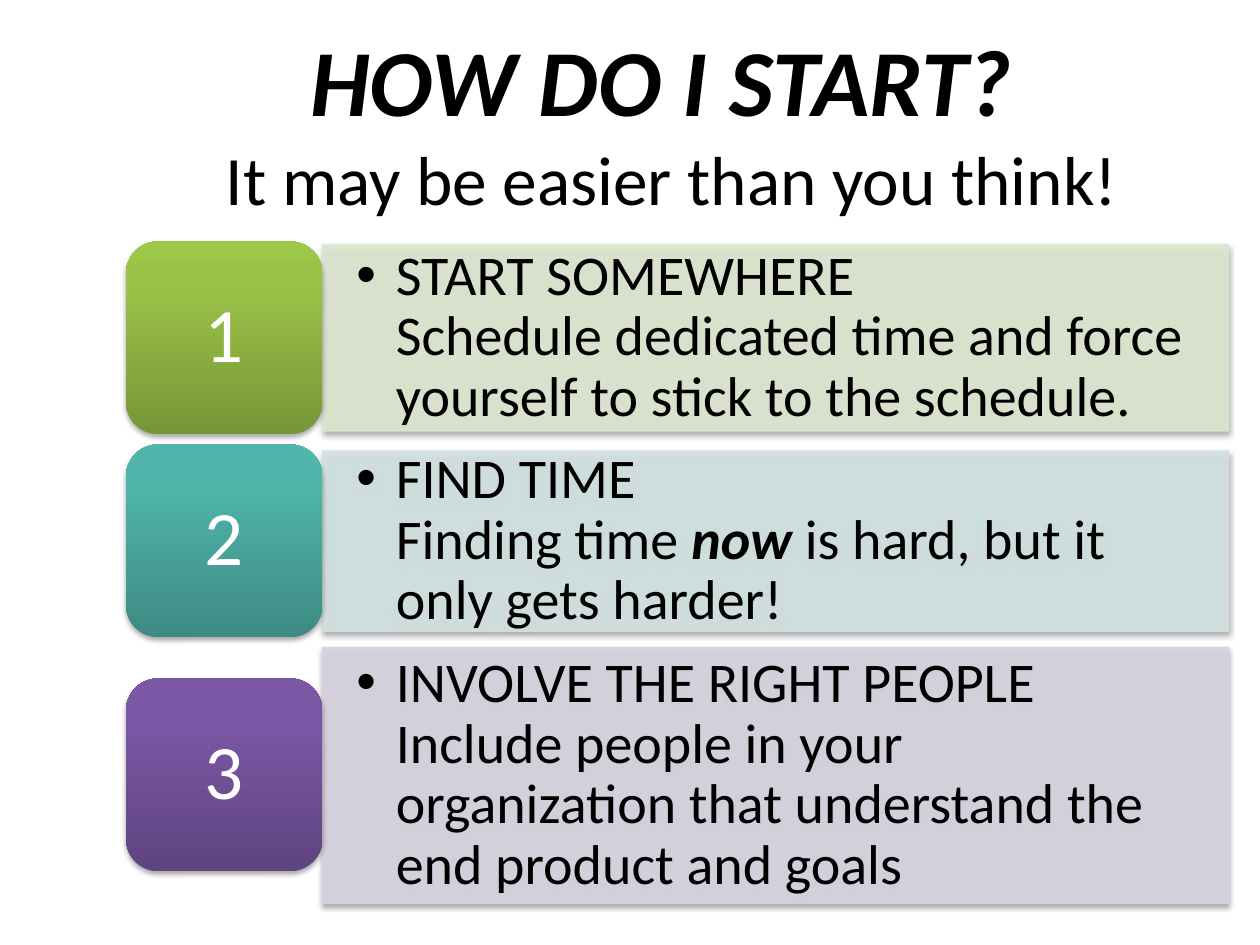
from lxml import etree
from pptx import Presentation
from pptx.dml.color import RGBColor
from pptx.enum.shapes import MSO_SHAPE as Shape
from pptx.enum.text import MSO_ANCHOR as Anchor, MSO_AUTO_SIZE as AutoSize, PP_ALIGN as Align
from pptx.oxml import parse_xml
from pptx.oxml.ns import nsdecls, qn
from pptx.util import Pt

# Content: a run is (text, emphasised)
FONT = "Calibri"
TITLE = [("HOW DO I START? ", 54, True), ("It may be easier than you think!", 39.6, False)]
STEPS = [
    {"heading": "START SOMEWHERE",
     "runs": [("Schedule dedicated time and force yourself to stick to the schedule.", False)],
     "panel": "DEE7D1", "badge": ("779737", "9BC348", "9DC746"),
     "panel_top": 139.7, "panel_height": 106.6, "badge_top": 138},
    {"heading": "FIND TIME",
     "runs": [("Finding time ", False), ("now", True), (" is hard, but it only gets harder!", False)],
     "panel": "D2E3E2", "badge": ("3D8B83", "50B5AA", "4EB8AC"),
     "panel_top": 257.7, "panel_height": 103, "badge_top": 254},
    {"heading": "INVOLVE THE RIGHT PEOPLE",
     "runs": [("Include people in your organization that understand the end product and goals", False)],
     "panel": "D8D3E0", "badge": ("5F4480", "7B58A6", "7C57A8"),
     "panel_top": 370, "panel_height": 146.2, "badge_top": 387.7},
]

# Layout in points
BADGE_LEFT, BADGE_WIDTH, BADGE_HEIGHT = 72, 112.3, 110.2
PANEL_LEFT, PANEL_WIDTH = BADGE_LEFT + BADGE_WIDTH, 517.7


def rgb(color):
    return RGBColor.from_string(color)


def add_run(paragraph, text, size, color, strong=False):
    run = paragraph.add_run()
    run.text = text
    font = run.font
    font.name, font.size = FONT, Pt(size)
    font.bold = font.italic = strong
    font.color.rgb = rgb(color)


def set_frame(shape, side=7.2, edge=3.6):
    frame = shape.text_frame
    frame.word_wrap = True
    frame.auto_size = AutoSize.NONE
    frame.vertical_anchor = Anchor.MIDDLE
    frame.margin_left = frame.margin_right = Pt(side)
    frame.margin_top = frame.margin_bottom = Pt(edge)
    return frame.paragraphs[0]


def add_shadow(shape):
    shape._element.spPr.append(parse_xml(
        f'<a:effectLst {nsdecls("a")}><a:outerShdw blurRad="{Pt(3.1)}" dist="{Pt(1.8)}" '
        'dir="5400000" rotWithShape="0"><a:srgbClr val="000000"><a:alpha val="35000"/>'
        '</a:srgbClr></a:outerShdw></a:effectLst>'))


def set_opacity(fill_element, percent):
    color = fill_element.find(".//" + qn("a:srgbClr"))
    etree.SubElement(color, qn("a:alpha")).set("val", str(percent * 1000))


def add_panel(slide, step):
    panel = slide.shapes.add_shape(Shape.RECTANGLE, Pt(PANEL_LEFT), Pt(step["panel_top"]),
                                   Pt(PANEL_WIDTH), Pt(step["panel_height"]))
    panel.fill.solid()
    panel.fill.fore_color.rgb = panel.line.color.rgb = rgb(step["panel"])
    panel.line.width = Pt(0.75)
    properties = panel._element.spPr
    for tag in ("a:solidFill", "a:ln"):
        set_opacity(properties.find(qn(tag)), 90)
    add_shadow(panel)

    paragraph = set_frame(panel, 19.4, 10)
    paragraph.alignment = Align.LEFT
    paragraph.line_spacing = 0.9
    bullet = paragraph._p.get_or_add_pPr()
    bullet.set("marL", str(Pt(22.5)))
    bullet.set("indent", str(Pt(-22.5)))
    etree.SubElement(bullet, qn("a:buFont")).set("typeface", "Arial")
    etree.SubElement(bullet, qn("a:buChar")).set("char", "•")
    add_run(paragraph, step["heading"], 32, "000000")
    paragraph.add_line_break()
    for text, strong in step["runs"]:
        add_run(paragraph, text, 32, "000000", strong)


def add_badge(slide, number, step):
    badge = slide.shapes.add_shape(Shape.ROUNDED_RECTANGLE, Pt(BADGE_LEFT), Pt(step["badge_top"]),
                                   Pt(BADGE_WIDTH), Pt(BADGE_HEIGHT))
    badge.line.fill.background()
    stops = "".join(f'<a:gs pos="{position}000"><a:srgbClr val="{color}"/></a:gs>'
                    for position, color in zip((0, 80, 100), step["badge"]))
    badge._element.spPr.find(qn("a:prstGeom")).addnext(parse_xml(
        f'<a:gradFill {nsdecls("a")} rotWithShape="1"><a:gsLst>{stops}</a:gsLst>'
        '<a:lin ang="16200000" scaled="0"/></a:gradFill>'))
    add_shadow(badge)
    paragraph = set_frame(badge, 13, 6.5)
    paragraph.alignment = Align.CENTER
    paragraph.line_spacing = 0.9
    add_run(paragraph, str(number), 44, "FFFFFF")


def main():
    presentation = Presentation()
    presentation.slide_width, presentation.slide_height = Pt(720), Pt(540)
    slide = presentation.slides.add_slide(presentation.slide_layouts[5])

    # Title
    title = slide.shapes.title
    title.left, title.top, title.width, title.height = Pt(66), Pt(24), Pt(636), Pt(90)
    paragraph = set_frame(title)
    paragraph.alignment = Align.CENTER
    for index, (text, size, strong) in enumerate(TITLE):
        if index:
            paragraph.add_line_break()
        add_run(paragraph, text, size, "000000", strong)

    # Numbered steps
    for number, step in enumerate(STEPS, start=1):
        add_panel(slide, step)
        add_badge(slide, number, step)

    presentation.save("out.pptx")


if __name__ == "__main__":
    main()
